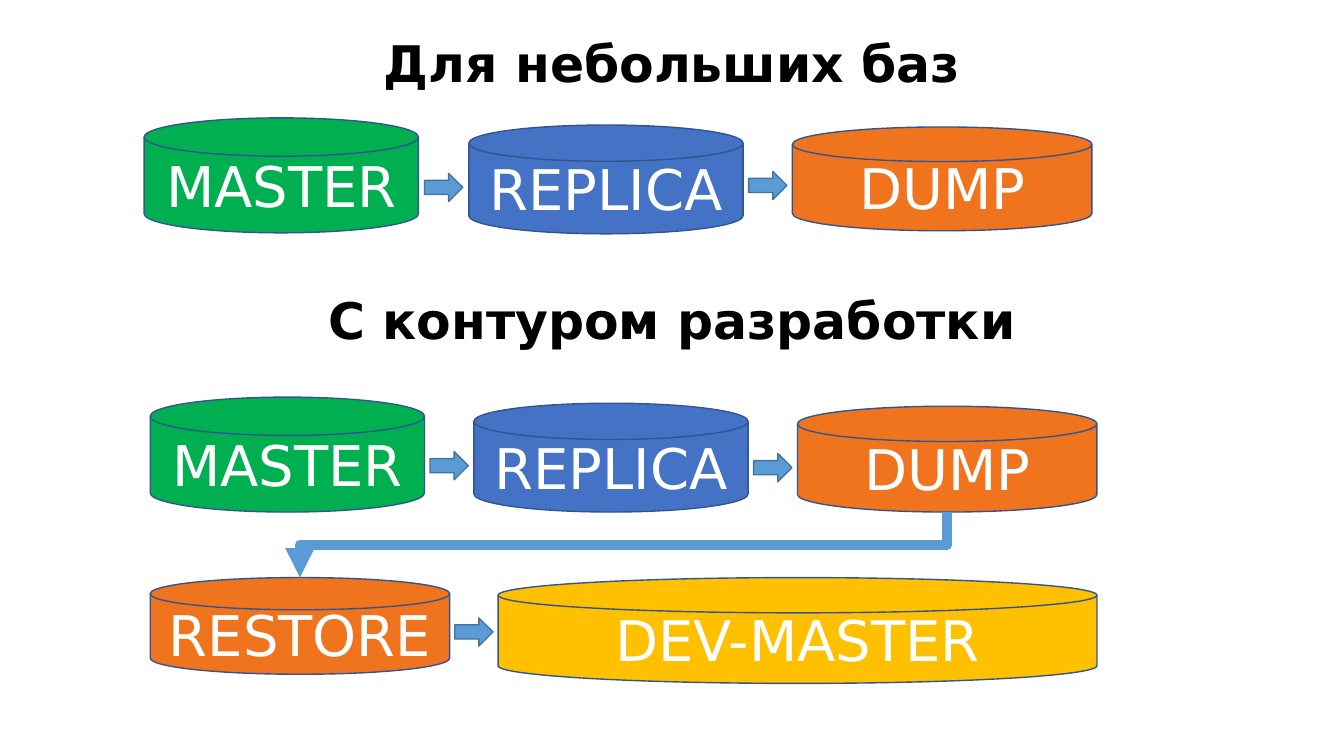
from dataclasses import dataclass
from itertools import pairwise

from lxml.etree import SubElement
from pptx import Presentation
from pptx.dml.color import RGBColor
from pptx.enum.shapes import MSO_CONNECTOR, MSO_SHAPE
from pptx.enum.text import MSO_ANCHOR, MSO_AUTO_SIZE, PP_ALIGN
from pptx.oxml.ns import qn
from pptx.util import Pt


@dataclass(frozen=True)
class Theme:
    font: str = "DejaVu Sans"
    heading_size: int = 36
    disk_size: int = 40
    outline_width: int = 1
    route_width: int = 7
    heading: str = "000000"
    disk_text: str = "FFFFFF"
    disk_line: str = "325491"
    arrow: str = "5B9BD5"
    arrow_line: str = "43739E"
    master: str = "00B050"
    replica: str = "4472C4"
    dump: str = "F0731E"
    dev: str = "FFC000"


THEME = Theme()
EMU_PER_PX = 9144  # 100 px to the inch
SLIDE_WIDTH, SLIDE_HEIGHT = 1333, 750
HEADING_HEIGHT = 73
ARROW_WIDTH, ARROW_HEIGHT = 38, 28

HEADINGS = [("Для небольших баз", 29), ("С контуром разработки", 284)]

# Each chain: disks as (label, colour, left, top, width, height), then arrow tops
CHAINS = [
    ([("MASTER", THEME.master, 143, 117, 272, 114),
      ("REPLICA", THEME.replica, 465, 124, 272, 108),
      ("DUMP", THEME.dump, 786, 126, 297, 103)], [172, 170]),
    ([("MASTER", THEME.master, 149, 394, 272, 114),
      ("REPLICA", THEME.replica, 470, 400, 272, 108),
      ("DUMP", THEME.dump, 791, 403, 297, 105)], [448, 450]),
    ([("RESTORE", THEME.dump, 149, 573, 297, 96),
      ("DEV-MASTER", THEME.dev, 494, 573, 594, 105)], [613]),
]


def px(length):
    return round(length * EMU_PER_PX)


def color(value):
    return RGBColor.from_string(value)


def write(shape, text, size, text_color, bold=False):
    frame = shape.text_frame
    frame.word_wrap = True
    frame.vertical_anchor = MSO_ANCHOR.MIDDLE
    frame.text = text
    paragraph = frame.paragraphs[0]
    paragraph.alignment = PP_ALIGN.CENTER
    font = paragraph.font
    font.name, font.size, font.bold = THEME.font, Pt(size), bold
    font.color.rgb = color(text_color)


def format_heading(shape, text, top):
    shape.left, shape.top = 0, px(top)
    shape.width, shape.height = px(SLIDE_WIDTH), px(HEADING_HEIGHT)
    write(shape, text, THEME.heading_size, THEME.heading, bold=True)
    frame = shape.text_frame
    frame.auto_size = MSO_AUTO_SIZE.NONE
    frame.margin_left = frame.margin_right = px(7)
    frame.margin_top = frame.margin_bottom = px(4)
    frame.paragraphs[0].line_spacing = 0.9


def add_filled(slide, kind, box, fill, line):
    shape = slide.shapes.add_shape(kind, *map(px, box))
    shape.shadow.inherit = False
    shape.fill.solid()
    shape.fill.fore_color.rgb = color(fill)
    shape.line.color.rgb = color(line)
    shape.line.width = Pt(THEME.outline_width)
    return shape


def add_chain(slide, disks, arrow_tops):
    for label, fill, *box in disks:
        disk = add_filled(slide, MSO_SHAPE.FLOWCHART_MAGNETIC_DISK, box, fill, THEME.disk_line)
        write(disk, label, THEME.disk_size, THEME.disk_text)
    for (before, after), top in zip(pairwise(disks), arrow_tops):
        gap_center = (before[2] + before[4] + after[2]) / 2
        box = (gap_center - ARROW_WIDTH / 2, top, ARROW_WIDTH, ARROW_HEIGHT)
        add_filled(slide, MSO_SHAPE.RIGHT_ARROW, box, THEME.arrow, THEME.arrow_line)


def add_route(slide, source, target):
    """Elbow arrow from the bottom of one disk to the top of a lower disk on its left."""
    _, _, left, top, width, height = source
    start_x, start_y = left + width / 2, top + height
    end_x, end_y = target[2] + target[4] / 2, target[3]
    center_x, center_y = (start_x + end_x) / 2, (start_y + end_y) / 2
    # A quarter turn makes the elbow leave and arrive vertically
    half_width, half_height = (end_y - start_y) / 2, (start_x - end_x) / 2
    route = slide.shapes.add_connector(
        MSO_CONNECTOR.ELBOW,
        px(center_x - half_width), px(center_y - half_height),
        px(center_x + half_width), px(center_y + half_height))
    route.line.color.rgb = color(THEME.arrow)
    route.line.width = Pt(THEME.route_width)
    properties = route._element.spPr
    properties.find(qn("a:xfrm")).set("rot", str(90 * 60000))
    SubElement(properties.find(qn("a:ln")), qn("a:tailEnd"), type="triangle")
    SubElement(properties, qn("a:effectLst"))


def main():
    presentation = Presentation()
    presentation.slide_width, presentation.slide_height = px(SLIDE_WIDTH), px(SLIDE_HEIGHT)
    slide = presentation.slides.add_slide(presentation.slide_layouts.get_by_name("Title Only"))

    heading_shapes = [slide.shapes.title, slide.shapes.add_textbox(0, 0, 0, 0)]
    for shape, (text, top) in zip(heading_shapes, HEADINGS):
        format_heading(shape, text, top)
    for disks, arrow_tops in CHAINS:
        add_chain(slide, disks, arrow_tops)
    dump, restore = CHAINS[1][0][-1], CHAINS[2][0][0]
    add_route(slide, dump, restore)

    presentation.save("out.pptx")


if __name__ == "__main__":
    main()
